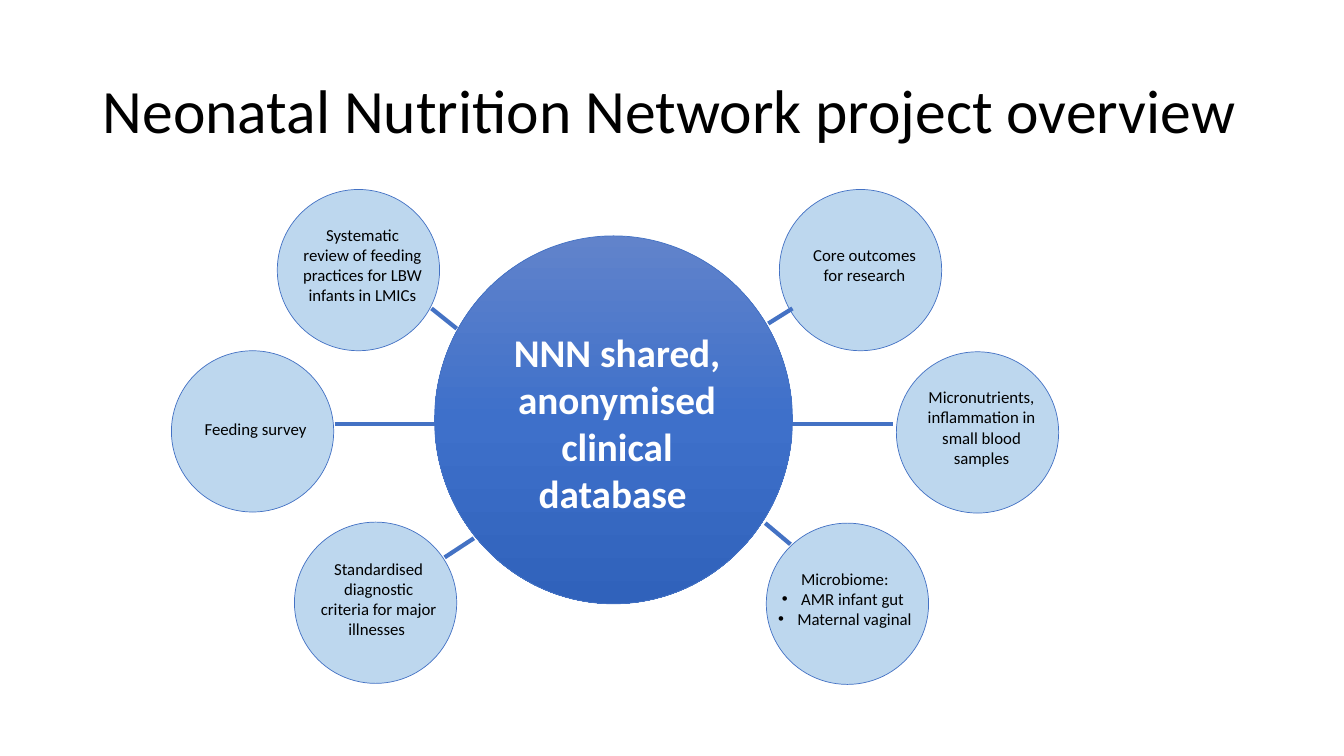
from copy import deepcopy

from lxml import etree
from pptx import Presentation
from pptx.dml.color import RGBColor
from pptx.enum import shapes, text
from pptx.oxml.ns import qn
from pptx.util import Inches, Pt

BLUE = "4472C4"
PALE_BLUE = "BDD7EE"
HUB_GRADIENT = [(0, "6183CB"), (0.5, "3E70CA"), (1, "3062BB")]
CIRCLE_SIZE = (1.61, 1.6)

# circle left and top, label box, label paragraphs (the first is a heading when there are more)
PROJECTS = [
    ((2.75, 1.88), (2.9, 2.18, 1.39, 1.11),
     ["Systematic review of feeding practices for LBW infants in LMICs"]),
    ((1.7, 3.48), (1.84, 4.11, 1.39, 0.3), ["Feeding survey"]),
    ((2.92, 5.18), (3.06, 5.49, 1.39, 0.91),
     ["Standardised diagnostic criteria for major illnesses "]),
    ((7.6, 5.19), (7.55, 5.59, 1.66, 0.71),
     ["Microbiome:", "AMR infant gut ", "Maternal vaginal"]),
    ((8.89, 3.49), (9.04, 3.79, 1.39, 1.11),
     ["Micronutrients, inflammation in small blood samples"]),
    ((7.73, 1.88), (7.88, 2.38, 1.39, 0.5), ["Core outcomes for research"]),
]

SPOKES = [
    (4.28, 3.06, 4.53, 3.26),
    (3.32, 4.21, 4.31, 4.21),
    (7.86, 4.21, 8.86, 4.21),
    (7.62, 3.21, 7.86, 3.06),
    (7.59, 5.19, 7.84, 5.4),
    (4.41, 5.53, 4.7, 5.34),
]


def rgb(color):
    return RGBColor.from_string(color)


def inches(values):
    return [Inches(value) for value in values]


def add_bullet(paragraph):
    properties = paragraph._p.get_or_add_pPr()
    properties.set("marL", str(Inches(0.19)))
    properties.set("indent", str(-Inches(0.19)))
    etree.SubElement(properties, qn("a:buFont")).set("typeface", "Arial")
    etree.SubElement(properties, qn("a:buChar")).set("char", "•")


def add_text(slide, box, paragraphs, size=12, color="000000", bold=False,
             align=text.PP_ALIGN.CENTER, anchor=text.MSO_ANCHOR.TOP, line_spacing=None):
    """Add a text box; every paragraph after the first is bulleted."""
    frame = slide.shapes.add_textbox(*inches(box)).text_frame
    frame.word_wrap = True
    frame.vertical_anchor = anchor
    for index, words in enumerate(paragraphs):
        paragraph = frame.add_paragraph() if index else frame.paragraphs[0]
        paragraph.alignment = align
        paragraph.line_spacing = line_spacing
        if index:
            add_bullet(paragraph)
        run = paragraph.add_run()
        run.text = words
        run.font.name = "Calibri"
        run.font.size = Pt(size)
        run.font.bold = bold
        run.font.color.rgb = rgb(color)


def add_circle(slide, box):
    circle = slide.shapes.add_shape(shapes.MSO_SHAPE.OVAL, *inches(box))
    circle.shadow.inherit = False
    circle.fill.solid()
    circle.fill.fore_color.rgb = rgb(PALE_BLUE)
    circle.line.color.rgb = rgb(BLUE)
    circle.line.width = Pt(0.5)
    return circle


def fill_downwards(shape, gradient):
    """Fill with a three-stop gradient that runs from top to bottom."""
    shape.fill.gradient()
    shape.fill.gradient_angle = 270
    stop_list = shape._element.spPr.find(qn("a:gradFill")).find(qn("a:gsLst"))
    stop_list.insert(1, deepcopy(stop_list[0]))
    for stop, (position, color) in zip(shape.fill.gradient_stops, gradient):
        stop.position = position
        stop.color.rgb = rgb(color)


def add_spoke(slide, ends):
    spoke = slide.shapes.add_connector(shapes.MSO_CONNECTOR.STRAIGHT, *inches(ends))
    spoke.line.color.rgb = rgb(BLUE)
    spoke.line.width = Pt(3)
    etree.SubElement(spoke._element.spPr, qn("a:effectLst"))


def main():
    presentation = Presentation()
    presentation.slide_width = Inches(13.33)
    presentation.slide_height = Inches(7.5)
    slide = presentation.slides.add_slide(presentation.slide_layouts[6])

    add_text(slide, (0.92, 0.4, 11.5, 1.45), ["Neonatal Nutrition Network project overview"],
             size=44, align=text.PP_ALIGN.LEFT, anchor=text.MSO_ANCHOR.MIDDLE,
             line_spacing=0.9)

    hub = add_circle(slide, (4.31, 2.34, 3.55, 3.65))
    fill_downwards(hub, HUB_GRADIENT)
    add_text(slide, (4.8, 3.21, 2.64, 1.99), ["NNN shared, anonymised clinical database "],
             size=28, color="FFFFFF", bold=True)

    for corner, label_box, label in PROJECTS:
        add_circle(slide, corner + CIRCLE_SIZE)
        add_text(slide, label_box, label)
    for ends in SPOKES:
        add_spoke(slide, ends)

    presentation.save("out.pptx")


if __name__ == "__main__":
    main()
